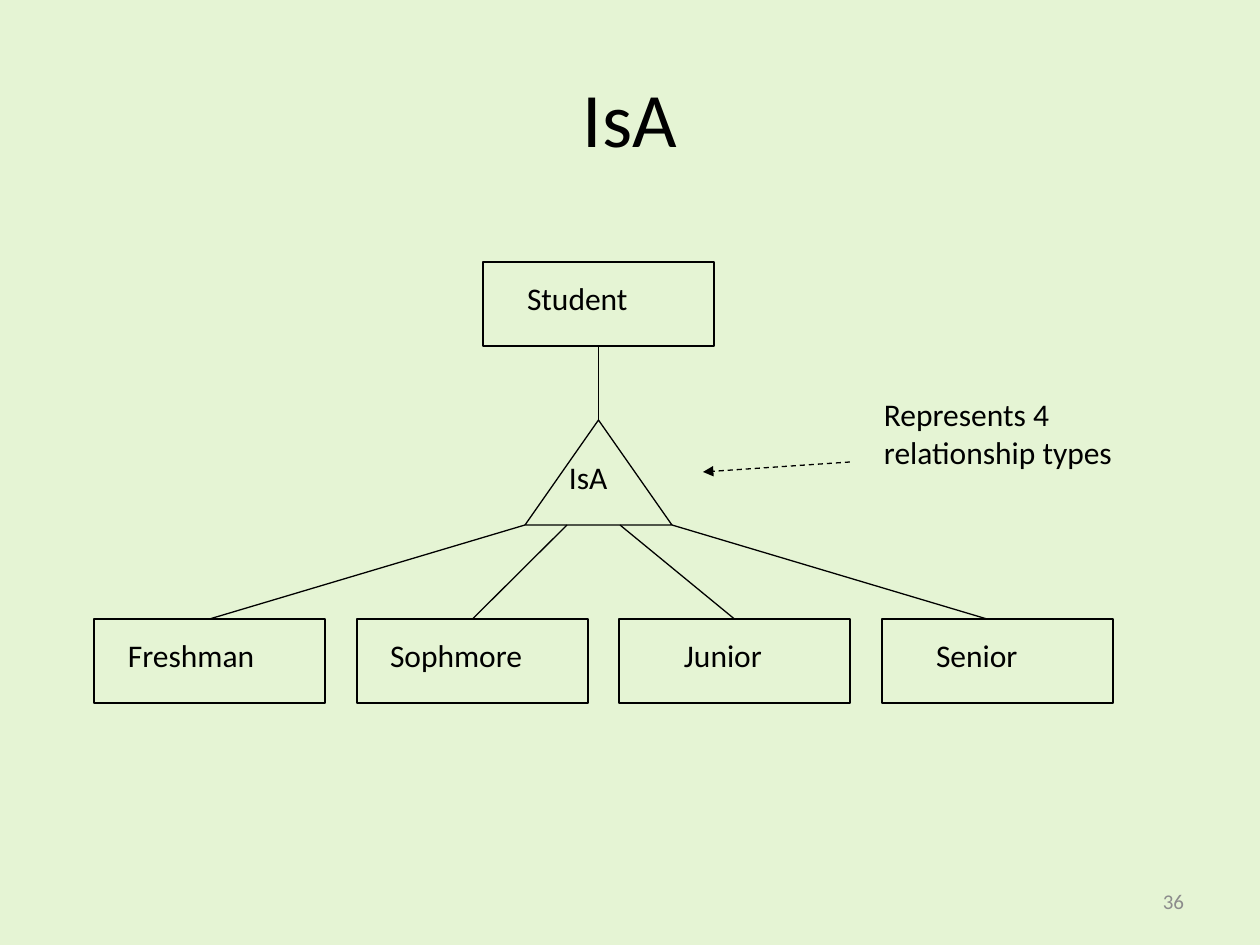
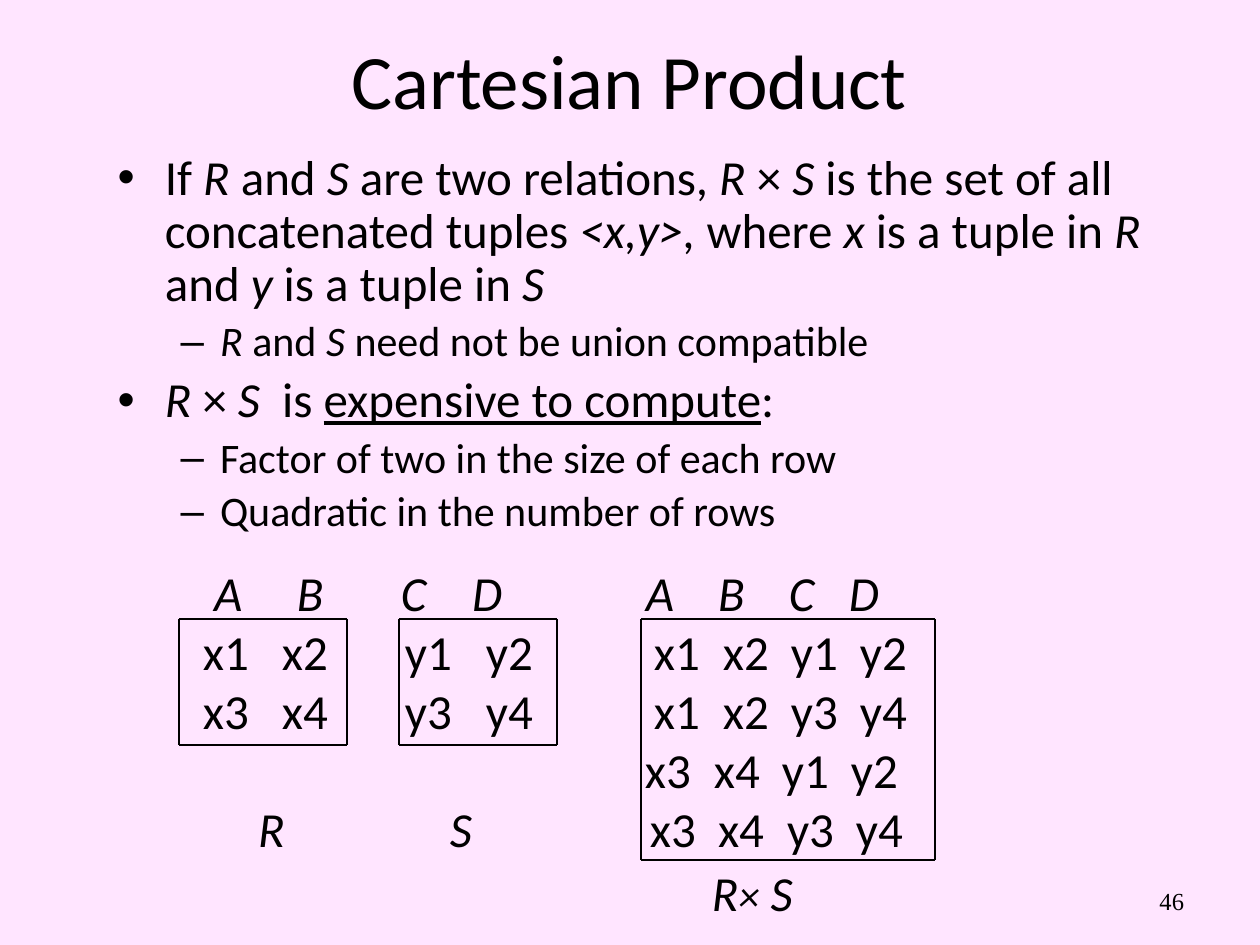
from typing import NamedTuple

import lxml.etree
import pptx
import pptx.dml.color
import pptx.enum.dml
import pptx.enum.shapes
import pptx.enum.text
import pptx.oxml.ns
import pptx.presentation
import pptx.shapes.autoshape
import pptx.shapes.base
import pptx.shapes.connector
import pptx.slide
import pptx.text.text
import pptx.util

# Shared style
EMU_PER_PX = 914400 / 126
BLACK = pptx.dml.color.RGBColor(0x00, 0x00, 0x00)
GREY = pptx.dml.color.RGBColor(0x8C, 0x8C, 0x8C)
PALE_GREEN = pptx.dml.color.RGBColor(0xE5, 0xF4, 0xD4)
PALE_PINK = pptx.dml.color.RGBColor(0xFF, 0xE5, 0xFF)
FONT = "Calibri"
LINE_WIDTH = pptx.util.Pt(0.75)
ALIGN = pptx.enum.text.PP_ALIGN
ANCHOR = pptx.enum.text.MSO_ANCHOR
SHAPE = pptx.enum.shapes.MSO_SHAPE


class Area(NamedTuple):
    left: int
    top: int
    width: int
    height: int


class Point(NamedTuple):
    x: int
    y: int


class PageNumber(NamedTuple):
    text: str
    size: int
    font: str
    colour: pptx.dml.color.RGBColor


class YearBox(NamedTuple):
    label: str
    inset: int
    fork_x: int
    foot_x: int


class Bullet(NamedTuple):
    level: int
    text: str  # * switches italic, _ switches underline


class TupleRow(NamedTuple):
    text: str  # * switches italic
    columns: list[int]  # left edge of each word on the page


def px(length: float) -> int:
    return round(length * EMU_PER_PX)


def place(shape: pptx.shapes.base.BaseShape, area: Area) -> None:
    shape.left, shape.top, shape.width, shape.height = map(px, area)


def sub_element(parent: lxml.etree._Element, tag: str, **attributes: str) -> lxml.etree._Element:
    return lxml.etree.SubElement(parent, pptx.oxml.ns.qn(tag), attributes)


def style_para(para: pptx.text.text._Paragraph, size: int, font: str = FONT,
               colour: pptx.dml.color.RGBColor = BLACK) -> None:
    para.font.size = pptx.util.Pt(size)
    para.font.name = font
    para.font.color.rgb = colour


def add_marked_text(para: pptx.text.text._Paragraph, marked: str) -> None:
    for italic_index, piece in enumerate(marked.split("*")):
        for underline_index, text in enumerate(piece.split("_")):
            if text:
                span = para.add_run()
                span.text = text
                span.font.italic = italic_index % 2 == 1
                span.font.underline = underline_index % 2 == 1


def add_text(page: pptx.slide.Slide, area: Area, lines: list[str], size: int) -> pptx.text.text.TextFrame:
    frame = page.shapes.add_textbox(*map(px, area)).text_frame
    frame.word_wrap = True
    frame.margin_left = frame.margin_right = frame.margin_top = frame.margin_bottom = 0
    frame.text = "\n".join(lines)
    for para in frame.paragraphs:
        style_para(para, size)
    return frame


def add_page(deck: pptx.presentation.Presentation, layout: int, background: pptx.dml.color.RGBColor,
             title: str, title_area: Area, number: PageNumber) -> pptx.slide.Slide:
    page = deck.slides.add_slide(deck.slide_layouts[layout])
    page.background.fill.solid()
    page.background.fill.fore_color.rgb = background
    place(page.shapes.title, title_area)
    page.shapes.title.text_frame.text = title
    style_para(page.shapes.title.text_frame.paragraphs[0], 44)
    frame = add_text(page, Area(903, 876, 281, 50), [number.text], number.size)
    frame.vertical_anchor = ANCHOR.MIDDLE
    frame.paragraphs[0].alignment = ALIGN.RIGHT
    style_para(frame.paragraphs[0], number.size, number.font, number.colour)
    return page


def add_outline(page: pptx.slide.Slide, kind: pptx.enum.shapes.MSO_SHAPE,
                area: Area) -> pptx.shapes.autoshape.Shape:
    shape = page.shapes.add_shape(kind, *map(px, area))
    shape.shadow.inherit = False
    shape.fill.background()
    shape.line.color.rgb = BLACK
    shape.line.width = LINE_WIDTH
    return shape


def add_entity(page: pptx.slide.Slide, corner: Point, label: str, inset: int) -> pptx.shapes.autoshape.Shape:
    box = add_outline(page, SHAPE.RECTANGLE, Area(*corner, 231, 84))
    frame = box.text_frame
    frame.vertical_anchor = ANCHOR.TOP
    frame.margin_left, frame.margin_right, frame.margin_top = px(inset), 0, px(17)
    frame.text = label
    frame.paragraphs[0].alignment = ALIGN.LEFT
    style_para(frame.paragraphs[0], 18)
    return box


def add_line(page: pptx.slide.Slide, start: Point, end: Point) -> pptx.shapes.connector.Connector:
    line = page.shapes.add_connector(pptx.enum.shapes.MSO_CONNECTOR.STRAIGHT, *map(px, start + end))
    line.line.color.rgb = BLACK
    line.line.width = LINE_WIDTH
    sub_element(line._element.spPr, "a:effectLst")
    return line


def add_line_frame(page: pptx.slide.Slide, area: Area) -> None:
    right, bottom = area.left + area.width, area.top + area.height
    corners = [Point(area.left, area.top), Point(right, area.top),
               Point(right, bottom), Point(area.left, bottom)]
    for index, corner in enumerate(corners):
        add_line(page, corner, corners[(index + 1) % 4])


def add_bullets(page: pptx.slide.Slide, area: Area, bullets: list[Bullet]) -> None:
    body = page.placeholders[1]
    place(body, area)
    frame = body.text_frame
    frame.auto_size = pptx.enum.text.MSO_AUTO_SIZE.NONE
    for index, bullet in enumerate(bullets):
        para = frame.add_paragraph() if index else frame.paragraphs[0]
        para.level = bullet.level
        para.line_spacing = 0.9
        style_para(para, 24 if bullet.level else 28)
        add_marked_text(para, bullet.text)


def set_tab_stops(para: pptx.text.text._Paragraph, stops: list[int]) -> None:
    properties = para._p.get_or_add_pPr()
    tab_list = sub_element(properties, "a:tabLst")
    properties.insert(0, tab_list)
    for stop in stops:
        sub_element(tab_list, "a:tab", pos=str(px(stop)), algn="l")


def add_tuple_rows(page: pptx.slide.Slide, area: Area, rows: list[TupleRow]) -> None:
    frame = add_text(page, area, [""] * len(rows), 28)
    for para, row in zip(frame.paragraphs, rows):
        set_tab_stops(para, [column - area.left for column in row.columns])
        add_marked_text(para, "".join("\t" + word for word in row.text.split()))
    # Product name, with a smaller sign
    name = frame.add_paragraph()
    set_tab_stops(name, [712 - area.left])
    name.line_spacing = 1.1
    style_para(name, 28)
    add_marked_text(name, "*\tR*" + "*×*" + "* S*")
    name.runs[1].font.size = pptx.util.Pt(24)


# Class hierarchy
YEARS = [YearBox("Freshman", 34, 525, 210), YearBox("Sophmore", 33, 567, 473),
         YearBox("Junior", 65, 620, 735), YearBox("Senior", 54, 672, 987)]


def build_hierarchy(deck: pptx.presentation.Presentation) -> None:
    page = add_page(deck, 5, PALE_GREEN, "IsA", Area(63, 38, 1134, 158),
                    PageNumber("36", 12, FONT, GREY))
    student = add_entity(page, Point(483, 262), "Student", 44)
    triangle = add_outline(page, SHAPE.ISOSCELES_TRIANGLE, Area(525, 420, 147, 105))
    add_text(page, Area(569, 458, 60, 40), ["IsA"], 18)
    stem = add_line(page, Point(598, 420), Point(598, 346))
    stem.begin_connect(triangle, 0)
    stem.end_connect(student, 2)

    for index, year in enumerate(YEARS):
        corner = Point(94 + round(788 * index / 3), 619)
        box = add_entity(page, corner, year.label, year.inset)
        branch = add_line(page, Point(year.fork_x, 525), Point(year.foot_x, corner.y))
        if abs(year.foot_x - corner.x - 231 / 2) < 2:
            branch.end_connect(box, 0)

    add_text(page, Area(884, 395, 298, 80), ["Represents 4", "relationship types"], 18)
    pointer = add_line(page, Point(850, 462), Point(703, 472))
    pointer.line.dash_style = pptx.enum.dml.MSO_LINE_DASH_STYLE.DASH
    sub_element(pointer.line._get_or_add_ln(), "a:tailEnd", type="triangle")


# Cartesian product
BULLETS = [
    Bullet(0, "If *R *and *S *are two relations, *R *× *S* is the set of all concatenated tuples "
              "*<x,y>,* where *x* is a tuple in *R* and *y* is a tuple in *S*"),
    Bullet(1, "*R* and *S* need not be union compatible"),
    Bullet(0, "*R *× *S*  is _expensive to compute_:"),
    Bullet(1, "Factor of two in the size of each row"),
    Bullet(1, "Quadratic in the number of rows"),
]
TUPLE_COLUMNS = [203, 282, 405, 486, 654, 723, 791, 860]
TUPLE_ROWS = [
    TupleRow("*A B C D A B C D*", [214, 297, 401, 472, 646, 718, 789, 849]),
    TupleRow("x1 x2 y1 y2 x1 x2 y1 y2", TUPLE_COLUMNS),
    TupleRow("x3 x4 y3 y4 x1 x2 y3 y4", TUPLE_COLUMNS),
    TupleRow("x3 x4 y1 y2", [645, 714, 782, 851]),
    TupleRow("*R S* x3 x4 y3 y4", [258, 450, 650, 718, 787, 856]),
]
RELATION_FRAMES = [Area(179, 619, 168, 126), Area(399, 619, 158, 126), Area(641, 619, 294, 241)]


def build_product(deck: pptx.presentation.Presentation) -> None:
    page = add_page(deck, 1, PALE_PINK, "Cartesian Product", Area(94, 0, 1071, 158),
                    PageNumber("46", 14, "Times New Roman", BLACK))
    add_bullets(page, Area(105, 147, 1061, 431), BULLETS)
    add_tuple_rows(page, Area(179, 563, 802, 366), TUPLE_ROWS)
    for frame in RELATION_FRAMES:
        add_line_frame(page, frame)


def main() -> None:
    deck = pptx.Presentation()
    deck.slide_width, deck.slide_height = px(1260), px(945)
    build_hierarchy(deck)
    build_product(deck)
    deck.save("out.pptx")


if __name__ == "__main__":
    main()
